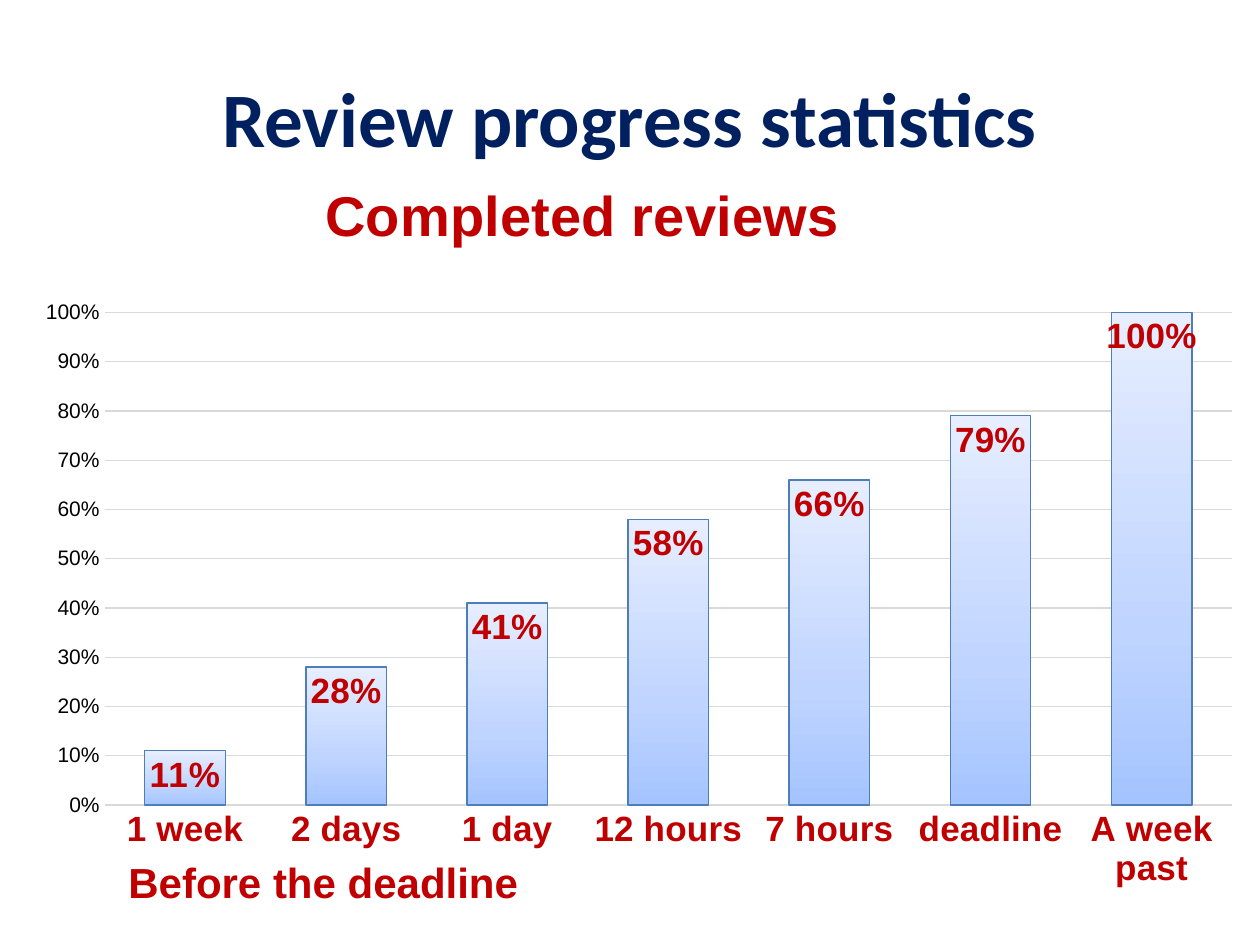
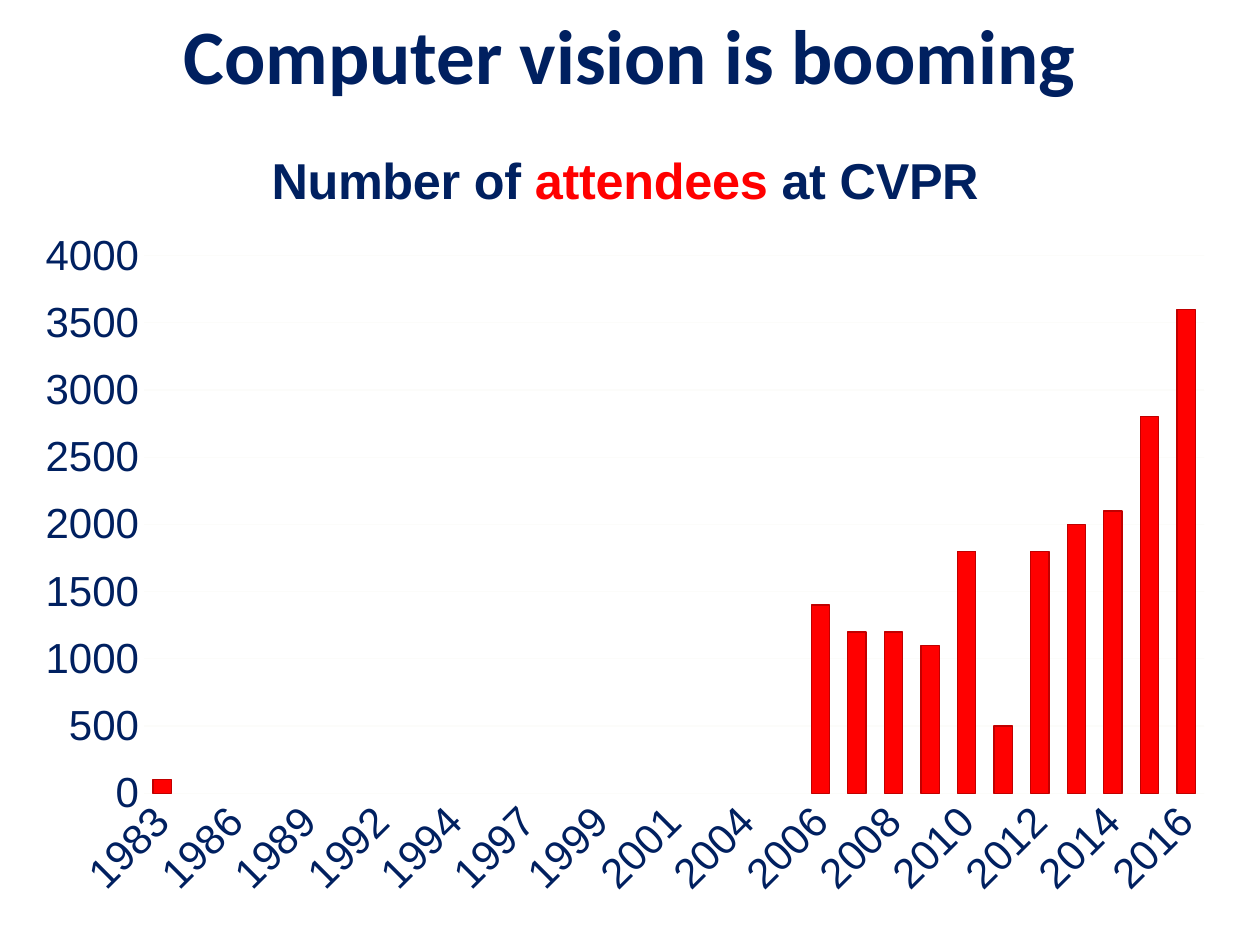
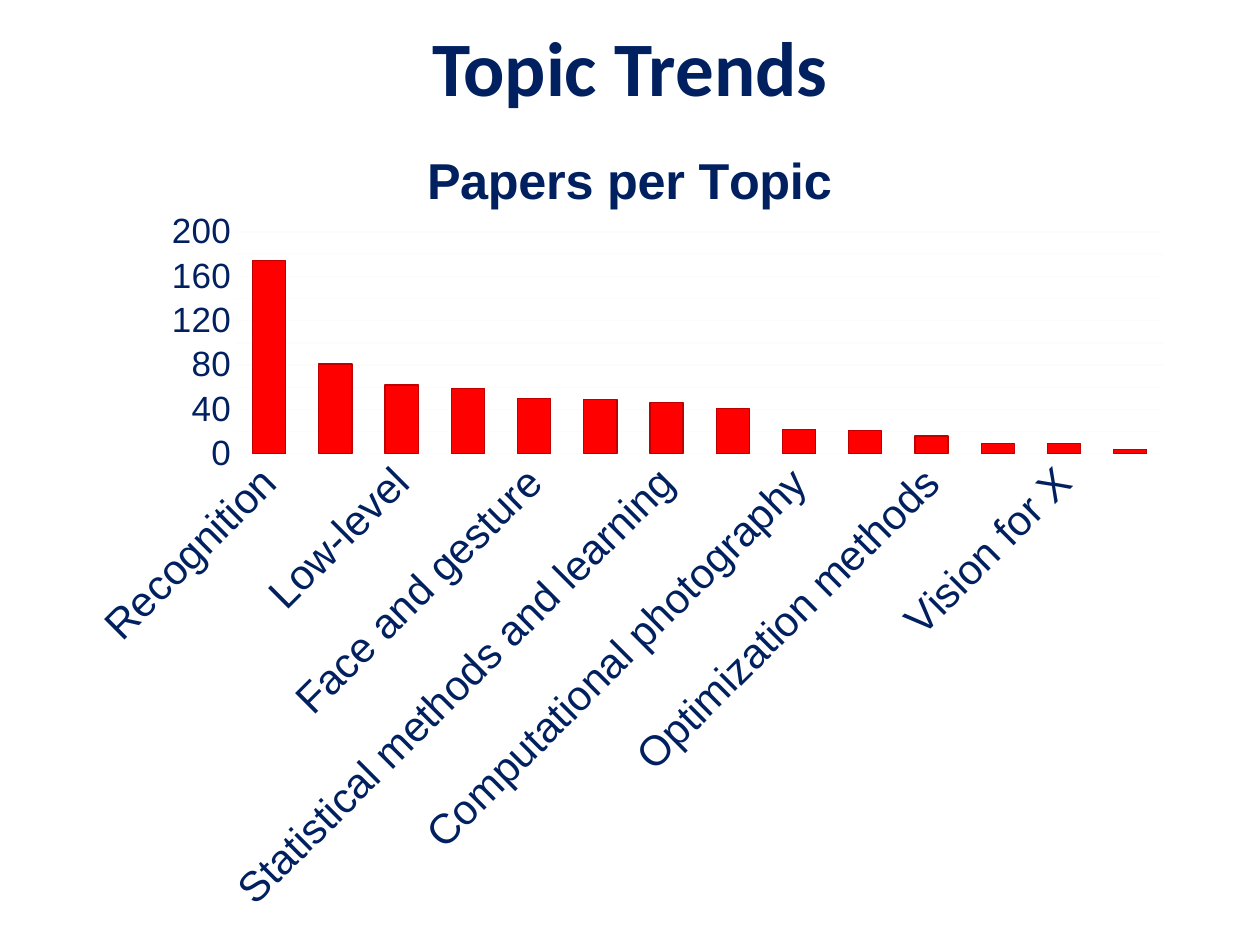
import copy

import lxml.etree
import pptx
import pptx.chart.data
import pptx.dml.color
import pptx.enum.chart
import pptx.enum.text
import pptx.oxml.ns
import pptx.util

Inches = pptx.util.Inches
qn = pptx.oxml.ns.qn

COLORS = {
    "navy": "002060",
    "crimson": "C00000",
    "red": "FF0000",
    "black": "000000",
    "gray_grid": "D9D9D9",
    "pale_grid": "FCFCFA",
    "blue_edge": "4D7EB9",
}
BAR_GRADIENT = [(0, "A4C4FF"), (0.35, "BFD4FF"), (1, "E6EEFF")]
LABEL_ANGLE = -45

REVIEW_PROGRESS = {
    "1 week": 0.11,
    "2 days": 0.28,
    "1 day": 0.41,
    "12 hours": 0.58,
    "7 hours": 0.66,
    "deadline": 0.79,
    "A week past": 1,
}
YEARS_WITHOUT_CVPR = {1984, 1987, 1990, 1995, 2002}
ATTENDEES = {
    1983: 100, 2006: 1400, 2007: 1200, 2008: 1200, 2009: 1100, 2010: 1800,
    2011: 500, 2012: 1800, 2013: 2000, 2014: 2100, 2015: 2800, 2016: 3600,
}
PAPERS = {
    "Recognition": 174,
    "Video": 81,
    "Low-level": 62,
    "3D": 59,
    "Face and gesture": 50,
    "Motion and tracking": 49,
    "Statistical methods and learning": 46,
    "Segmentation, grouping and shape repres": 41,
    "Computational photography": 22,
    "Unsupervised learning": 21,
    "Optimization methods": 16,
    "Biomedical": 9,
    "Vision for X": 9,
    "Other": 4,
}


def rgb(color):
    return pptx.dml.color.RGBColor.from_string(COLORS.get(color, color))


def style_font(font, size, color, bold=False, name="Arial"):
    values = {"size": pptx.util.Pt(size), "bold": bold, "name": name}
    for attribute, value in values.items():
        setattr(font, attribute, value)
    font.color.rgb = rgb(color)


def style_line(line, color):
    line.color.rgb = rgb(color)
    line.width = pptx.util.Pt(0.75)


def add_text(page, place, text, wrap=True, centered=False, **font):
    box = page.shapes.add_textbox(*map(Inches, place))
    frame = box.text_frame
    frame.word_wrap = wrap
    para = frame.paragraphs[0]
    if centered:
        frame.vertical_anchor = pptx.enum.text.MSO_ANCHOR.MIDDLE
        para.alignment = pptx.enum.text.PP_ALIGN.CENTER
    span = para.add_run()
    span.text = text
    style_font(span.font, **font)


def add_page(deck, title, top, height):
    page = deck.slides.add_slide(deck.slide_layouts[6])
    add_text(page, (0.5, top, 9, height), title, centered=True,
             size=44, color="navy", bold=True, name="Calibri")
    return page


def set_layout(parent, index, chart_place, place):
    """Fix a chart part at a place given in slide inches: left, top[, width, height]."""
    layout = parent.find(qn("c:layout"))
    if layout is None:
        layout = lxml.etree.Element(qn("c:layout"))
        parent.insert(index, layout)
    left, top, width, height = chart_place
    values = {"xMode": "edge", "yMode": "edge",
              "x": (place[0] - left) / width, "y": (place[1] - top) / height}
    if len(place) == 4:
        values = {"layoutTarget": "inner", **values,
                  "w": place[2] / width, "h": place[3] / height}
    manual = lxml.etree.SubElement(layout, qn("c:manualLayout"))
    for tag, value in values.items():
        lxml.etree.SubElement(manual, qn("c:" + tag)).set("val", str(value))


def style_axis(axis, **font):
    axis.major_tick_mark = axis.minor_tick_mark = pptx.enum.chart.XL_TICK_MARK.NONE
    style_font(axis.tick_labels.font, **font)


def add_column_chart(page, place, data, title, title_size, step, maximum,
                     category_font, value_font, grid="pale_grid", number_format="General"):
    """Add a one-series column chart; title is a list of (text, color) runs."""
    chart_data = pptx.chart.data.CategoryChartData(number_format=number_format)
    chart_data.categories = list(data)
    chart_data.add_series("".join(text for text, _ in title), list(data.values()))
    chart = page.shapes.add_chart(pptx.enum.chart.XL_CHART_TYPE.COLUMN_CLUSTERED,
                                  *map(Inches, place), chart_data).chart
    chart.has_legend = False
    style_font(chart.font, **value_font)

    chart.has_title = True
    para = chart.chart_title.text_frame.paragraphs[0]
    for text, color in title:
        span = para.add_run()
        span.text = text
        style_font(span.font, title_size, color, bold=True)

    style_axis(chart.category_axis, **category_font)
    style_line(chart.category_axis.format.line, grid)
    axis = chart.value_axis
    style_axis(axis, **value_font)
    axis.format.line.fill.background()
    style_line(axis.major_gridlines.format.line, grid)
    scale = {"minimum_scale": 0, "maximum_scale": maximum, "major_unit": step}
    for attribute, value in scale.items():
        setattr(axis, attribute, value)
    axis.tick_labels.number_format = number_format
    axis.tick_labels.number_format_is_linked = False

    plot = chart.plots[0]
    for attribute, value in {"gap_width": 100, "overlap": -24,
                             "vary_by_categories": False}.items():
        setattr(plot, attribute, value)
    return chart


def fill_bars(chart, color, edge):
    bars = chart.plots[0].series[0].format
    bars.fill.solid()
    bars.fill.fore_color.rgb = rgb(color)
    style_line(bars.line, edge)


def fill_bars_with_gradient(chart, stops, edge):
    series = chart.plots[0].series[0]
    fill = series.format.fill
    fill.gradient()
    fill.gradient_angle = 90
    stop_list = chart.element.find(".//" + qn("c:ser")).find(".//" + qn("a:gsLst"))
    while len(stop_list) < len(stops):
        stop_list.append(copy.deepcopy(stop_list[-1]))
    for stop, (position, color) in zip(fill.gradient_stops, stops):
        stop.position = position
        stop.color.rgb = rgb(color)
    style_line(series.format.line, edge)


def label_bars(chart, **font):
    labels = chart.plots[0].series[0].data_labels
    values = {"show_value": True, "number_format": "0%", "number_format_is_linked": False,
              "position": pptx.enum.chart.XL_LABEL_POSITION.INSIDE_END}
    for attribute, value in values.items():
        setattr(labels, attribute, value)
    style_font(labels.font, **font)


def slant_category_labels(chart):
    body = chart.element.find(".//" + qn("c:catAx")).find(
        qn("c:txPr") + "/" + qn("a:bodyPr"))
    body.set("rot", str(LABEL_ANGLE * 60000))
    body.set("vert", "horz")


def add_review_progress(deck):
    page = add_page(deck, "Review progress statistics", 0.3, 1.25)
    accent = {"size": 20, "color": "crimson", "bold": True}
    place = (0.17, 1.33, 9.81, 5.83)
    chart = add_column_chart(
        page, place, REVIEW_PROGRESS,
        [("Completed ", "crimson"), ("reviews", "crimson")], 32, 0.1, 1,
        accent, {"size": 12, "color": "black"}, "gray_grid", "0%")
    set_layout(chart.element.find(".//" + qn("c:plotArea")), 0, place,
               (0.83, 2.48, 8.95, 3.91))
    set_layout(chart.element.find(".//" + qn("c:title")), 1, place, (2.55, 1.42))
    fill_bars_with_gradient(chart, BAR_GRADIENT, "blue_edge")
    label_bars(chart, **accent)
    add_text(page, (0.92, 6.75, 3.32, 0.5), "Before the deadline", wrap=False,
             size=24, color="crimson", bold=True)


def add_red_chart(page, place, data, title, step, maximum, value_size):
    chart = add_column_chart(page, place, data, title, 28.8, step, maximum,
                             {"size": 24, "color": "navy"},
                             {"size": value_size, "color": "navy"})
    fill_bars(chart, "red", "crimson")
    slant_category_labels(chart)


def main():
    deck = pptx.Presentation()
    deck.slide_width, deck.slide_height = Inches(10), Inches(7.5)

    add_review_progress(deck)

    attendance = {year: ATTENDEES.get(year) for year in range(1983, 2017)
                  if year not in YEARS_WITHOUT_CVPR}
    page = add_page(deck, "Computer vision is booming", 0.16, 0.53)
    add_red_chart(page, (0.17, 1, 9.58, 6.25), attendance,
                  [("Number of ", "navy"), ("attendees", "red"), (" at CVPR", "navy")],
                  500, 4000, 24)

    page = add_page(deck, "Topic Trends", 0.17, 0.7)
    add_red_chart(page, (0.58, 1, 8.83, 6.25), PAPERS,
                  [("Papers per ", "navy"), ("Topic", "navy")], 20, 200, 20)

    deck.save("out.pptx")


if __name__ == "__main__":
    main()
